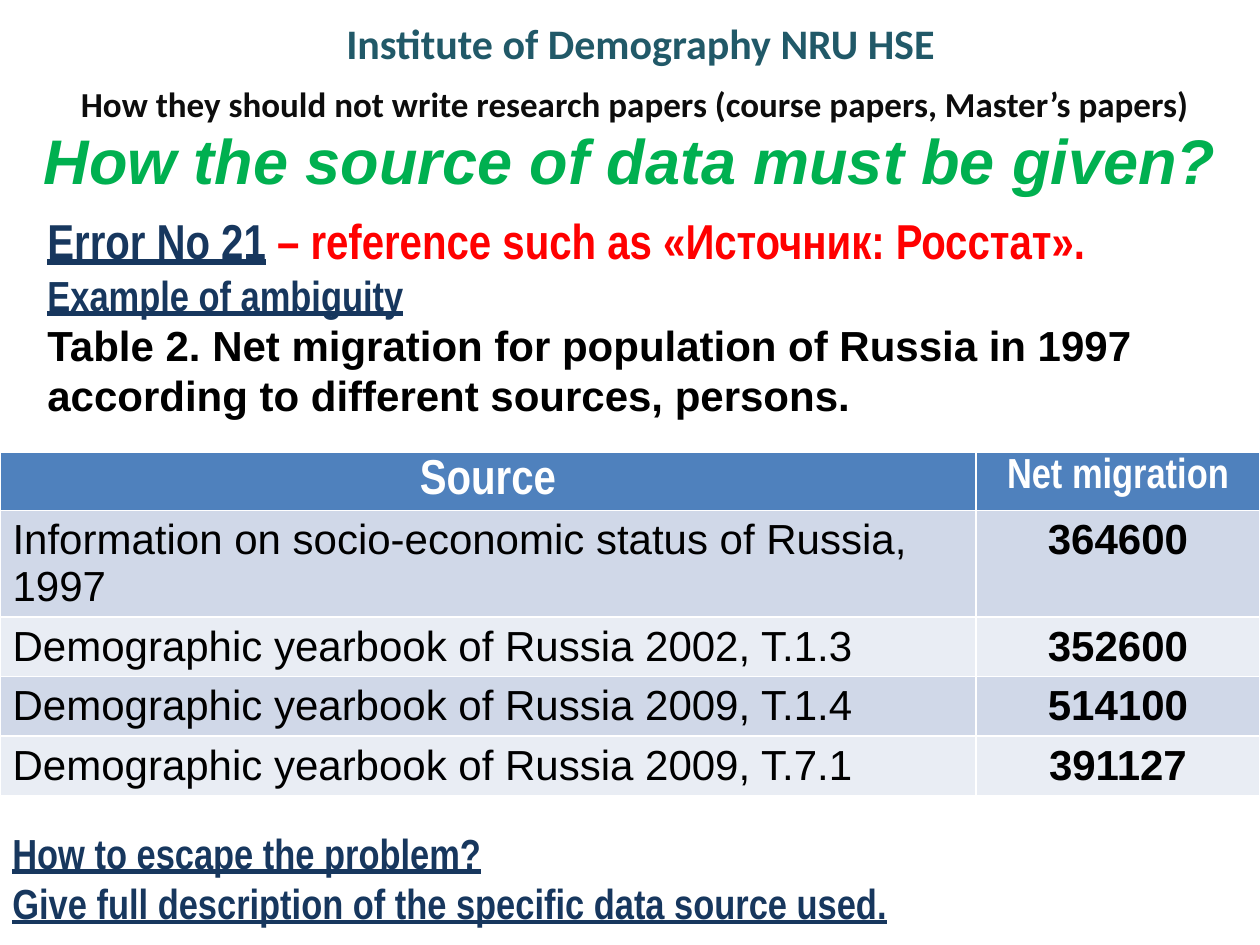
from pptx import Presentation
from pptx.dml.color import RGBColor as Rgb
from pptx.enum.text import MSO_ANCHOR as Anchor, MSO_AUTO_SIZE as Fit, PP_ALIGN as Align
from pptx.util import Emu, Pt

DPI = 126
HUES = {
    "teal": "215968", "ink": "0D0D0D", "green": "00B050", "navy": "17375E",
    "red": "FF0000", "black": "000000", "white": "FFFFFF",
    "head": "4F81BD", "odd": "D0D8E8", "even": "E9EDF4",
}
NARROW = {"name": "Arial Narrow", "bold": True}
LINK = {**NARROW, "size": 24, "hue": "navy", "underline": True}
ERROR = {**LINK, "size": 28}
ARIAL = {"name": "Arial", "size": 24, "hue": "black"}
BOLD = {**ARIAL, "bold": True}

ROWS = [
    ("Information on socio-economic status of Russia, 1997", "364600"),
    ("Demographic yearbook of Russia 2002, T.1.3", "352600"),
    ("Demographic yearbook of Russia 2009, T.1.4", "514100"),
    ("Demographic yearbook of Russia 2009, T.7.1", "391127"),
]


def px(num):
    return Emu(round(num * 914400 / DPI))


def hue(key):
    return Rgb.from_string(HUES[key])


def style(font, form):
    for key, val in form.items():
        if key == "hue":
            font.color.rgb = hue(val)
        else:
            setattr(font, key, Pt(val) if key == "size" else val)


def write(frame, paras, align=Align.LEFT):
    """Fill a frame with paragraphs, each a list of (text, format) runs."""
    for i, runs in enumerate(paras):
        para = frame.add_paragraph() if i else frame.paragraphs[0]
        para.alignment = align
        for text, form in runs:
            run = para.add_run()
            run.text = text
            style(run.font, form)


def place(shape, box, paras, align=Align.LEFT, anchor=Anchor.MIDDLE):
    shape.left, shape.top, shape.width, shape.height = map(px, box)
    frame = shape.text_frame
    frame.word_wrap = True
    frame.auto_size = Fit.NONE
    frame.vertical_anchor = anchor
    write(frame, paras, align)


def add_text(slide, box, *args, **opts):
    place(slide.shapes.add_textbox(*map(px, box)), box, *args, **opts)


def fill_cell(cell, text, form, align, back):
    cell.fill.solid()
    cell.fill.fore_color.rgb = hue(back)
    write(cell.text_frame, [[(text, form)]], align)


def add_grid(slide, box, widths, high):
    grid = slide.shapes.add_table(len(ROWS) + 1, len(widths), *map(px, box)).table
    for col, wide in zip(grid.columns, widths):
        col.width = px(wide)
    for row in grid.rows:
        row.height = px(high)
    for c, (text, size) in enumerate([("Source", 28), ("Net migration", 24)]):
        form = {**NARROW, "size": size, "hue": "white"}
        fill_cell(grid.cell(0, c), text, form, Align.CENTER, "head")
    for r, (source, count) in enumerate(ROWS, 1):
        back = "odd" if r % 2 else "even"
        fill_cell(grid.cell(r, 0), source, ARIAL, Align.LEFT, back)
        fill_cell(grid.cell(r, 1), count, BOLD, Align.CENTER, back)


def main():
    deck = Presentation()
    deck.slide_width, deck.slide_height = px(1260), px(945)
    slide = deck.slides.add_slide(deck.slide_layouts[0])
    title, sub = slide.placeholders

    head = {"name": "Calibri", "size": 24, "hue": "teal", "bold": True}
    place(title, (105, 0, 1071, 86),
          [[("Institute of Demography NRU HSE", head)]], Align.CENTER)
    place(sub, (64, 76, 1142, 69),
          [[("How they should not write research papers (course papers, Master’s papers)",
             {**head, "size": 20, "hue": "ink"})]], Align.CENTER, Anchor.TOP)
    add_text(slide, (0, 125, 1260, 69),
             [[("How the source of data must be given?",
                {**BOLD, "size": 36, "hue": "green", "italic": True})]], Align.CENTER)
    add_text(slide, (35, 204, 1191, 268), [
        [("Error No 21", ERROR),
         (" ", {**ERROR, "underline": False}),
         ("– reference such as «Источник: Росстат».",
          {**ERROR, "hue": "red", "underline": False})],
        [("Example of ambiguity", LINK)],
        [("Table 2. Net migration for population of Russia in 1997 "
          "according to different sources, persons.", BOLD)],
    ], anchor=Anchor.TOP)
    add_text(slide, (0, 810, 1260, 135), [
        [("How to escape the problem?", LINK)],
        [("Give full description of the specific data source used.", LINK)],
    ])
    add_grid(slide, (0, 452, 1260, 260), (976, 284), 52)
    deck.save("out.pptx")


if __name__ == "__main__":
    main()
